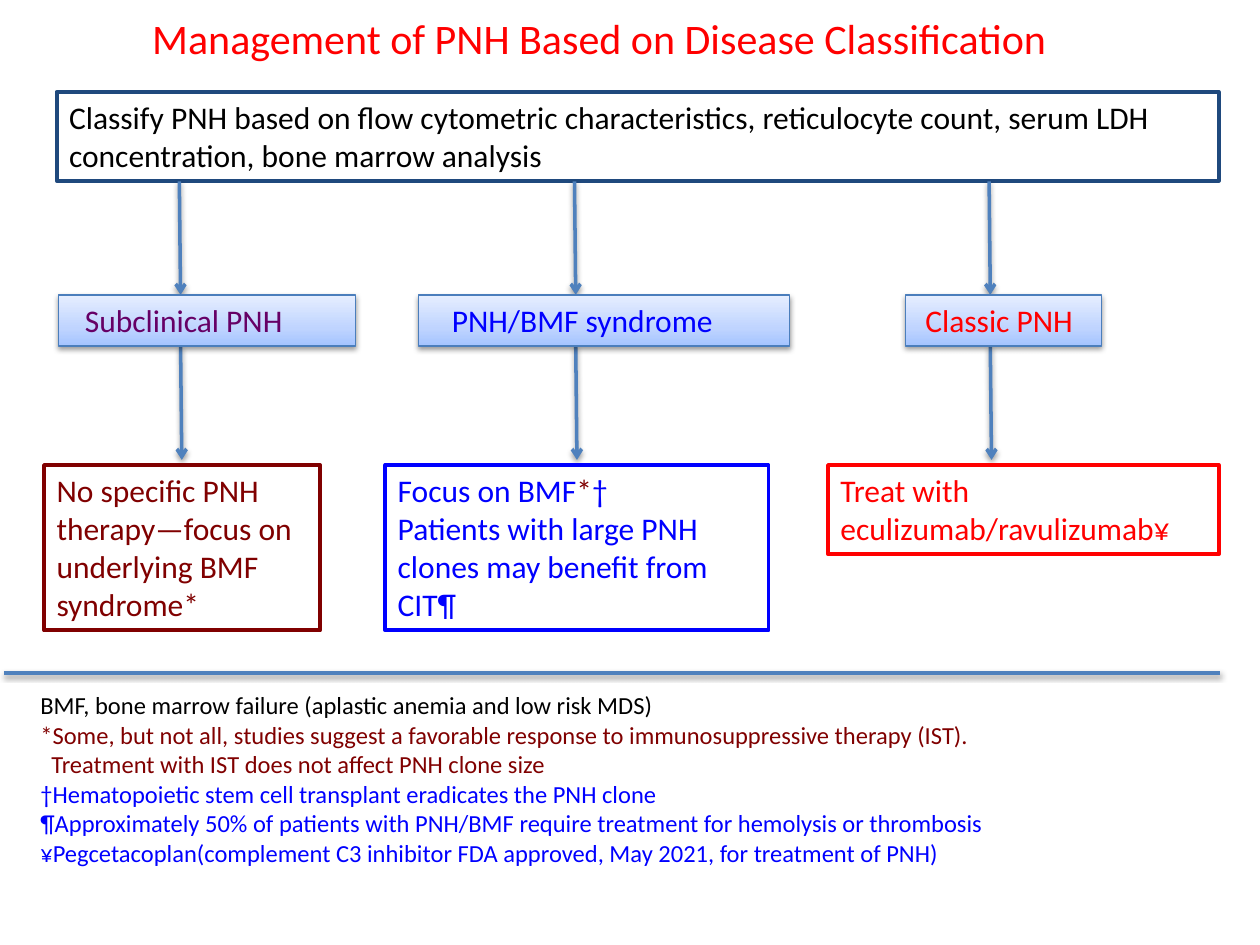
from lxml.etree import SubElement
from pptx import Presentation
from pptx.dml.color import RGBColor
from pptx.enum.shapes import MSO_CONNECTOR
from pptx.enum.text import MSO_AUTO_SIZE
from pptx.oxml.ns import qn
from pptx.util import Pt

FONT = "Calibri"
BLACK = RGBColor(0x00, 0x00, 0x00)
RED = RGBColor(0xFF, 0x00, 0x00)
BLUE = RGBColor(0x00, 0x00, 0xFF)
MAROON = RGBColor(0x80, 0x00, 0x00)
PURPLE = RGBColor(0x66, 0x00, 0x66)
NAVY = RGBColor(0x1F, 0x49, 0x7D)
LINE_BLUE = RGBColor(0x4F, 0x81, 0xBD)
EDGE_BLUE = RGBColor(0x4B, 0x7E, 0xBC)
GRADIENT = [(0, RGBColor(0xA4, 0xC4, 0xFF)), (35, RGBColor(0xBF, 0xD4, 0xFF)),
            (100, RGBColor(0xE6, 0xEE, 0xFF))]

INSET = 7.2
BOX_TOP = 52.5
CLASS_TOP, CLASS_HEIGHT = 168.6, 29.1
TREATMENT_TOP = 265.8
ARROW_TOPS, ARROW_LENGTH, ARROW_DRIFT = (103.7, 198), 64.8, 0.7

# class name, colour, left, width, text indent, arrow x
CLASSES = [
    ("Subclinical PNH", PURPLE, 33.3, 169.9, 8, 102.5),
    ("PNH/BMF syndrome", BLUE, 239, 212, 12, 328.3),
    ("Classic PNH", RED, 517.6, 111.8, 4, 565.2),
]

# colour, left, width, height, paragraphs
TREATMENTS = [
    (MAROON, 25.2, 157.7, 94.5,
     [[("No specific PNH therapy—focus on underlying BMF syndrome*", MAROON)]]),
    (BLUE, 220.2, 219, 94.5,
     [[("Focus on BMF", BLUE), ("*", MAROON), ("†", BLUE)],
      [("Patients with large PNH clones may benefit from CIT¶", BLUE)]]),
    (RED, 473.2, 223.3, 50.9,
     [[("Treat with eculizumab/ravulizumab¥", RED)]]),
]

CONTINUATION = 2
FOOTNOTES = [
    [("BMF, bone marrow failure (aplastic anemia and low risk MDS)", BLACK)],
    [("*Some, but not all, studies suggest a favorable response to "
      "immunosuppressive therapy (IST).", MAROON)],
    [("Treatment with IST does not affect PNH clone size", MAROON)],
    [("†Hematopoietic stem cell transplant eradicates the PNH clone", BLUE)],
    [("¶Approximately 50% of patients with PNH/BMF require treatment for "
      "hemolysis or thrombosis", BLUE)],
    [("¥Pegcetacoplan(complement C3 inhibitor FDA approved, May 2021, for "
      "treatment of PNH)", BLUE)],
]


def add_text(slide, left, top, width, height, paragraphs, size=18, indent=0):
    """Add a text box; each paragraph is a list of (text, colour) runs."""
    s = slide.shapes.add_textbox(Pt(left), Pt(top), Pt(width), Pt(height))
    tf = s.text_frame
    tf.word_wrap = True
    tf.auto_size = MSO_AUTO_SIZE.SHAPE_TO_FIT_TEXT
    tf.margin_left = Pt(INSET + indent)
    for i, runs in enumerate(paragraphs):
        p = tf.add_paragraph() if i else tf.paragraphs[0]
        p.font.name, p.font.size = FONT, Pt(size)
        for text, color in runs:
            r = p.add_run()
            r.text = text
            r.font.name, r.font.size = FONT, Pt(size)
            r.font.color.rgb = color
    return s


def set_outline(s, color, width):
    s.line.color.rgb = color
    s.line.width = Pt(width)


def add_shadow(s):
    effects = SubElement(s._element.spPr, qn("a:effectLst"))
    shadow = SubElement(effects, qn("a:outerShdw"), blurRad=str(Pt(3.15)),
                        dist=str(Pt(1.6)), dir="5400000", rotWithShape="0")
    color = SubElement(shadow, qn("a:srgbClr"), val=str(BLACK))
    SubElement(color, qn("a:alpha"), val="38000")


def fill_gradient(s):
    s.fill.gradient()
    s.fill.gradient_angle = 90
    stops = s._element.spPr.find(".//" + qn("a:gsLst"))
    for stop in list(stops):
        stops.remove(stop)
    for percent, color in GRADIENT:
        stop = SubElement(stops, qn("a:gs"), pos=str(percent * 1000))
        SubElement(stop, qn("a:srgbClr"), val=str(color))


def add_line(slide, x1, y1, x2, y2, arrow=False):
    s = slide.shapes.add_connector(MSO_CONNECTOR.STRAIGHT,
                                   Pt(x1), Pt(y1), Pt(x2), Pt(y2))
    set_outline(s, LINE_BLUE, 2)
    if arrow:
        SubElement(s.line._get_or_add_ln(), qn("a:tailEnd"), type="arrow")
    add_shadow(s)


def add_class_box(slide, name, color, left, width, indent):
    s = add_text(slide, left, CLASS_TOP, width, CLASS_HEIGHT,
                 [[(name, color)]], indent=indent)
    fill_gradient(s)
    set_outline(s, EDGE_BLUE, 0.75)
    add_shadow(s)


def add_outlined_box(slide, color, left, top, width, height, paragraphs):
    s = add_text(slide, left, top, width, height, paragraphs)
    set_outline(s, color, 2.25)


def add_footnotes(slide):
    s = add_text(slide, 16, 391, 704, 108.7, FOOTNOTES, size=14)
    p = s.text_frame.paragraphs[CONTINUATION]
    p._p.get_or_add_pPr().set("marL", str(Pt(6.3)))


def main():
    prs = Presentation()
    prs.slide_width, prs.slide_height = Pt(720), Pt(540)
    slide = prs.slides.add_slide(prs.slide_layouts[6])

    add_text(slide, 79.9, 3.6, 580.3, 36.3,
             [[("Management of PNH Based on Disease Classification", RED)]], size=24)
    add_outlined_box(slide, NAVY, 32.4, BOX_TOP, 664, 50.9,
                     [[("Classify PNH based on flow cytometric characteristics, "
                        "reticulocyte count, serum LDH concentration, "
                        "bone marrow analysis", BLACK)]])
    for name, color, left, width, indent, arrow_x in CLASSES:
        for i, top in enumerate(ARROW_TOPS):
            x = arrow_x + i * ARROW_DRIFT
            add_line(slide, x, top, x + ARROW_DRIFT, top + ARROW_LENGTH, arrow=True)
        add_class_box(slide, name, color, left, width, indent)
    for color, left, width, height, paragraphs in TREATMENTS:
        add_outlined_box(slide, color, left, TREATMENT_TOP, width, height, paragraphs)
    add_footnotes(slide)
    add_line(slide, 2.2, 384.5, 697, 384.5)
    prs.save("out.pptx")


if __name__ == "__main__":
    main()
